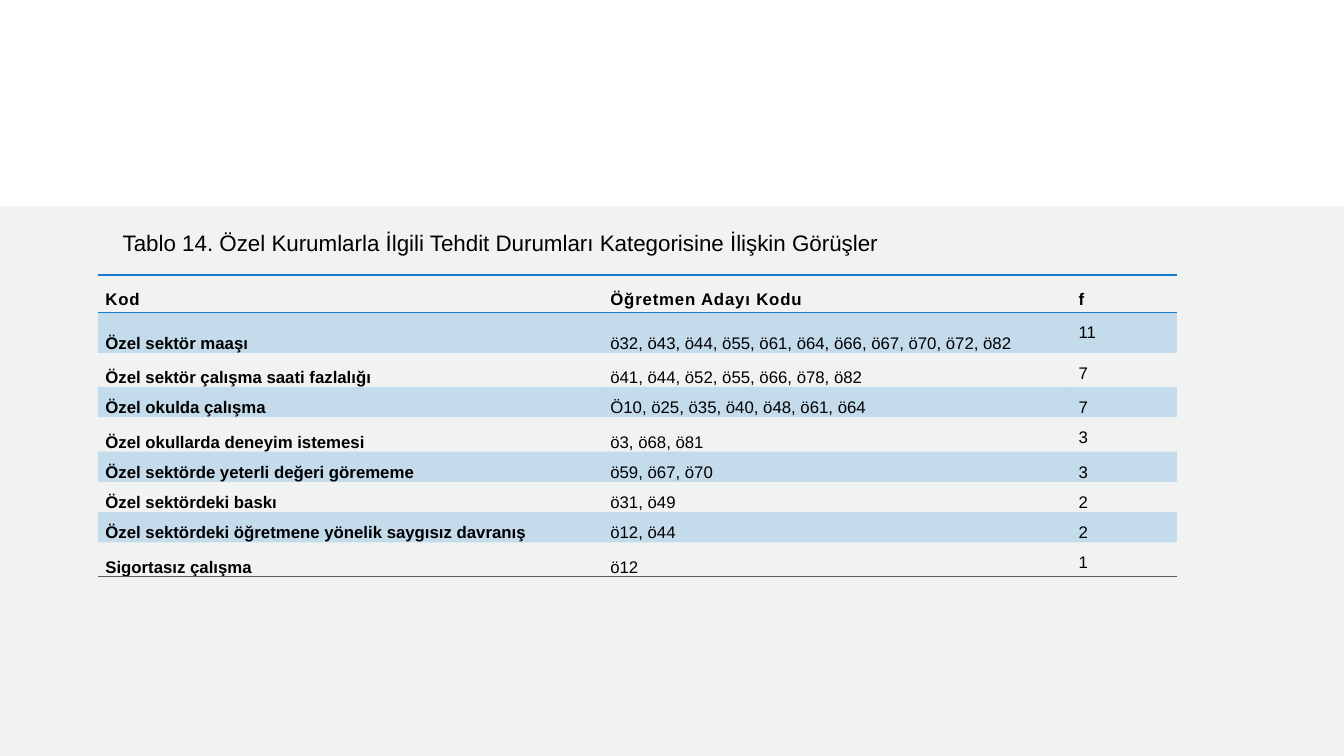
"""Builds the slide with Tablo 14, threats seen in private institutions."""
import pptx
import pptx.dml.color
import pptx.enum.shapes
import pptx.enum.text
import pptx.oxml
import pptx.oxml.ns
import pptx.util
from lxml import etree

Pt = pptx.util.Pt
ALIGN = pptx.enum.text.PP_ALIGN
ANCHOR = pptx.enum.text.MSO_ANCHOR

CAPTION = "Tablo 14. Özel Kurumlarla İlgili Tehdit Durumları Kategorisine İlişkin Görüşler"
HEADER = ("Kod", "Öğretmen Adayı Kodu", "f")
OPINIONS = [
    ("Özel sektör maaşı", "ö32, ö43, ö44, ö55, ö61, ö64, ö66, ö67, ö70, ö72, ö82", "11"),
    ("Özel sektör çalışma saati fazlalığı", "ö41, ö44, ö52, ö55, ö66, ö78, ö82", "7"),
    ("Özel okulda çalışma", "Ö10, ö25, ö35, ö40, ö48, ö61, ö64", "7"),
    ("Özel okullarda deneyim istemesi", "ö3, ö68, ö81", "3"),
    ("Özel sektörde yeterli değeri görememe", "ö59, ö67, ö70", "3"),
    ("Özel sektördeki baskı", "ö31, ö49", "2"),
    ("Özel sektördeki öğretmene yönelik saygısız davranış", "ö12, ö44", "2"),
    ("Sigortasız çalışma", "ö12", "1"),
]
WIDTH, HEIGHT = 960, 540
PANELS = [(0, "FFFFFF"), (147, "F0F3F2")]
CAPTION_BOX = (80.4, 160, 628, 26.6)
TABLE_LEFT, TABLE_TOP = 69.9, 196.4
COLUMN_WIDTHS = (360.7, 334.5, 75.5)
ROW_HEIGHTS = (26.6, 29, 24.4, 21.6, 24.6, 21.6, 21.6, 21.6, 24.6)
BLUE, GREY, BLACK = "177BD5", "595959", "000000"
BAND_ALPHA = "20000"
NO_STYLE = "{2D5ABB26-0587-4C30-8999-92F81FD0307C}"
CELL_FORMAT = {"margin_left": Pt(5.4), "margin_right": Pt(5.4),
               "margin_top": Pt(7.2), "margin_bottom": Pt(0)}
PARAGRAPH_FORMAT = {"alignment": ALIGN.JUSTIFY, "line_spacing": 1.07, "space_after": Pt(8)}


def rgb(color):
    return pptx.dml.color.RGBColor.from_string(color)


def apply(target, values):
    for name, value in values.items():
        setattr(target, name, value)


def style_font(font, size, bold):
    apply(font, {"name": "Arial", "size": Pt(size), "bold": bold})
    font.color.rgb = rgb(BLACK)


def place(shape, box):
    apply(shape, dict(zip(("left", "top", "width", "height"), map(Pt, box))))


def add_panel(slide, top, color):
    panel = slide.shapes.add_shape(pptx.enum.shapes.MSO_SHAPE.RECTANGLE,
                                   0, Pt(top), Pt(WIDTH), Pt(HEIGHT - top))
    panel.shadow.inherit = False
    panel.fill.solid()
    panel.fill.fore_color.rgb = rgb(color)
    panel.line.fill.background()


def add_caption(slide):
    caption = slide.shapes.title
    place(caption, CAPTION_BOX)
    frame = caption.text_frame
    frame.text = CAPTION
    apply(frame, {"word_wrap": True, "vertical_anchor": ANCHOR.TOP})
    frame.paragraphs[0].alignment = ALIGN.LEFT
    style_font(frame.paragraphs[0].runs[0].font, 16, False)
    slide.shapes._spTree.append(caption._element)


def border(cell, sides):
    for position, (side, color) in enumerate(sides):
        rule = pptx.oxml.parse_xml(
            f'<a:{side} {pptx.oxml.ns.nsdecls("a")} w="{Pt(1)}"><a:solidFill>'
            f'<a:srgbClr val="{color}"/></a:solidFill></a:{side}>')
        cell._tc.get_or_add_tcPr().insert(position, rule)


def fill_band(cell):
    cell.fill.solid()
    cell.fill.fore_color.rgb = rgb(BLUE)
    tint = cell._tc.tcPr.find(".//" + pptx.oxml.ns.qn("a:srgbClr"))
    etree.SubElement(tint, pptx.oxml.ns.qn("a:alpha"), val=BAND_ALPHA)


def format_cell(cell, text, row, column):
    is_header = row == 0
    anchor = ANCHOR.MIDDLE if is_header else ANCHOR.TOP if column == 2 else ANCHOR.BOTTOM
    apply(cell, {**CELL_FORMAT, "text": text, "vertical_anchor": anchor})
    paragraph = cell.text_frame.paragraphs[0]
    apply(paragraph, PARAGRAPH_FORMAT)
    run = paragraph.runs[0]
    style_font(run.font, 12, is_header or column == 0)
    if row % 2:
        fill_band(cell)
    else:
        cell.fill.background()
    if is_header:
        run.font._element.set("spc", "60")
        border(cell, [("lnT", BLUE), ("lnB", BLUE)])
    elif row == len(OPINIONS):
        border(cell, [("lnB", GREY)])


def add_opinions(slide):
    frame = slide.shapes.add_table(
        len(ROW_HEIGHTS), len(COLUMN_WIDTHS), Pt(TABLE_LEFT), Pt(TABLE_TOP),
        Pt(sum(COLUMN_WIDTHS)), Pt(sum(ROW_HEIGHTS)))
    table = frame.table
    apply(table, {"first_row": False, "horz_banding": False})
    table._tbl.tblPr.find(pptx.oxml.ns.qn("a:tableStyleId")).text = NO_STYLE
    for column, width in zip(table.columns, COLUMN_WIDTHS):
        column.width = Pt(width)
    for row, height in zip(table.rows, ROW_HEIGHTS):
        row.height = Pt(height)
    for row, texts in enumerate([HEADER, *OPINIONS]):
        for column, text in enumerate(texts):
            format_cell(table.cell(row, column), text, row, column)


def main():
    deck = pptx.Presentation()
    apply(deck, {"slide_width": Pt(WIDTH), "slide_height": Pt(HEIGHT)})
    slide = deck.slides.add_slide(deck.slide_layouts[5])
    for top, color in PANELS:
        add_panel(slide, top, color)
    add_opinions(slide)
    add_caption(slide)
    deck.save("out.pptx")


if __name__ == "__main__":
    main()
